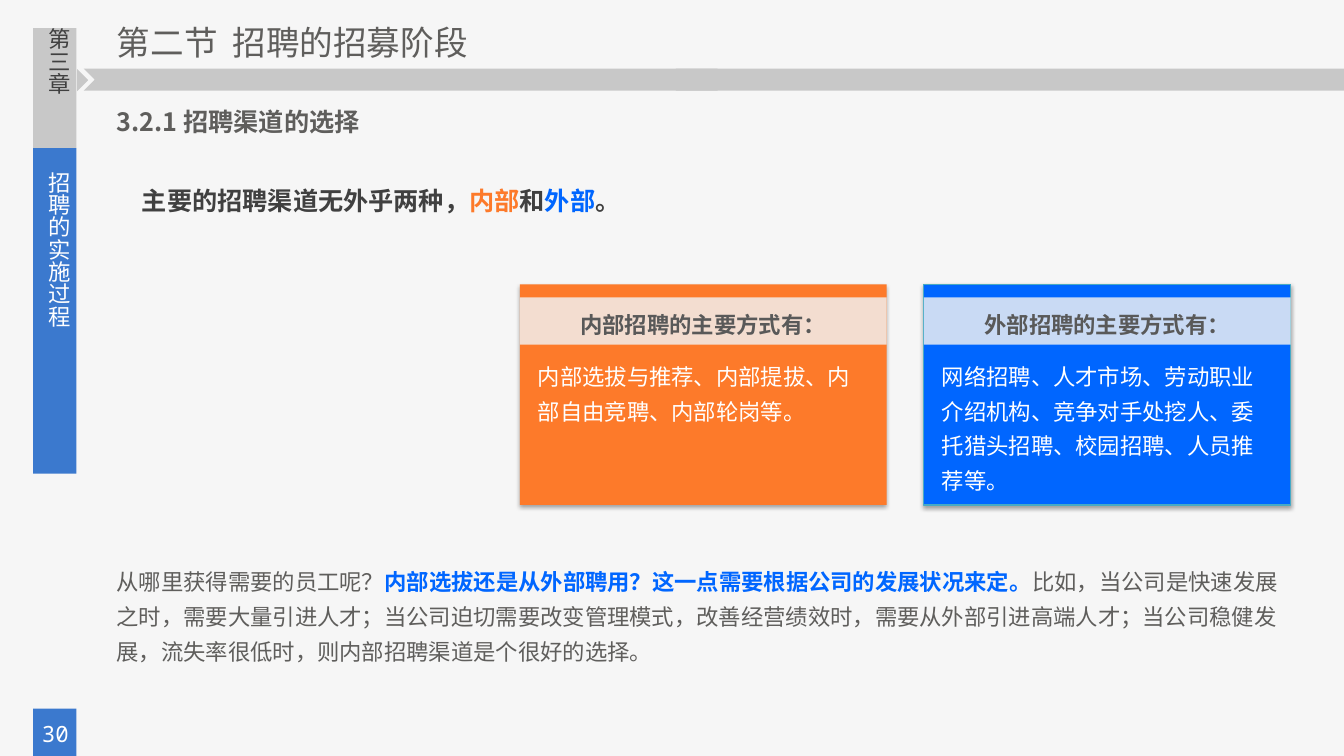
from dataclasses import dataclass

from lxml import etree
from pptx import Presentation
from pptx.dml.color import RGBColor
from pptx.enum.shapes import MSO_SHAPE
from pptx.enum.text import MSO_ANCHOR, MSO_AUTO_SIZE, PP_ALIGN
from pptx.oxml.ns import qn
from pptx.util import Inches, Pt

RECTANGLE, CHEVRON = MSO_SHAPE.RECTANGLE, MSO_SHAPE.CHEVRON
TRIANGLE = MSO_SHAPE.ISOSCELES_TRIANGLE
LEFT, CENTER = PP_ALIGN.LEFT, PP_ALIGN.CENTER
TOP, MIDDLE = MSO_ANCHOR.TOP, MSO_ANCHOR.MIDDLE
NO_AUTOFIT = MSO_AUTO_SIZE.NONE


@dataclass(frozen=True)
class Theme:
    font: str = "Noto Sans CJK SC"
    number_font: str = "Noto Sans Mono"
    page: str = "F6F6F6"
    gray: str = "C8C8C8"
    side_blue: str = "3B79CE"
    orange: str = "FD7A2A"
    blue: str = "0066FF"
    card_edge: str = "46AAC5"
    veil: str = "F2F2F2"
    body: str = "5F5E5C"
    dark: str = "404040"
    card_title: str = "595959"
    white: str = "FFFFFF"
    title_size: int = 24
    heading_size: int = 18
    text_size: int = 16
    spacing: float = 1.3


THEME = Theme()

CHAPTER = "第三章"
CHAPTER_NAME = "招聘的实施过程"
PAGE_NUMBER = "30"
TITLE = "第二节  招聘的招募阶段"
HEADING = "3.2.1 招聘渠道的选择"
# Spans are plain text, or (text, colour) for an emphasised part.
LEAD = ["主要的招聘渠道无外乎两种，", ("内部", THEME.orange), "和",
        ("外部", THEME.blue), "。"]
CARDS = [
    ("内部招聘的主要方式有：",
     "内部选拔与推荐、内部提拔、内部自由竞聘、内部轮岗等。",
     THEME.orange, None),
    ("外部招聘的主要方式有：",
     "网络招聘、人才市场、劳动职业介绍机构、竞争对手处挖人、"
     "委托猎头招聘、校园招聘、人员推荐等。",
     THEME.blue, THEME.card_edge),
]
CLOSING = [
    "从哪里获得需要的员工呢？",
    ("内部选拔还是从外部聘用？这一点需要根据公司的发展状况来定。", THEME.blue),
    "比如，当公司是快速发展之时，需要大量引进人才；当公司迫切需要改变管理模式，"
    "改善经营绩效时，需要从外部引进高端人才；当公司稳健发展，流失率很低时，"
    "则内部招聘渠道是个很好的选择。",
]

# Frame parts: preset, (left, top, width, height), colour, rotation
FRAME = [
    (CHEVRON, (0.83, 0.68, 6.4, 0.22), THEME.gray, 0),
    (RECTANGLE, (0.33, 0.28, 0.43, 1.19), THEME.gray, 0),
    (TRIANGLE, (0.71, 0.74, 0.22, 0.11), THEME.gray, 90),
    (RECTANGLE, (0.33, 1.47, 0.43, 3.23), THEME.side_blue, 0),
    (RECTANGLE, (6.71, 0.68, 6.63, 0.22), THEME.gray, 0),
    (RECTANGLE, (0.33, 7.03, 0.43, 0.47), THEME.side_blue, 0),
]

CARD_LEFT, CARD_TOP, CARD_PITCH = 5.16, 2.82, 4.01
CARD_WIDTH, CARD_HEIGHT = 3.64, 2.19


def add_block(page, preset, at, color, rotation=0, edge=None):
    block = page.shapes.add_shape(preset, *map(Inches, at))
    block.rotation = rotation
    block.shadow.inherit = False
    block.fill.solid()
    block.fill.fore_color.rgb = RGBColor.from_string(color)
    if edge:
        block.line.color.rgb = RGBColor.from_string(edge)
        block.line.width = Pt(0.75)
    else:
        block.line.fill.background()
    return block


def add_alpha(color_element, percent):
    etree.SubElement(color_element, qn("a:alpha"), val=str(percent * 1000))


def add_drop_shadow(block):
    effects = block._element.spPr.find(qn("a:effectLst"))
    shadow = etree.SubElement(
        effects, qn("a:outerShdw"), blurRad=str(Pt(3.1)), dist=str(Pt(1.8)),
        dir=str(90 * 60000), algn="t", rotWithShape="0")
    add_alpha(etree.SubElement(shadow, qn("a:srgbClr"), val="000000"), 35)


def write(box, spans, color, size=THEME.text_size, bold=False, align=LEFT,
          spacing=THEME.spacing, font=THEME.font, anchor=TOP):
    frame = box.text_frame
    frame.word_wrap = True
    frame.auto_size = NO_AUTOFIT
    frame.vertical_anchor = anchor
    para = frame.paragraphs[0]
    para.alignment = align
    para.line_spacing = spacing
    para.font.name = font
    para.font.size = Pt(size)
    para.font.bold = bold
    para.font.color.rgb = RGBColor.from_string(color)
    etree.SubElement(para.font._element, qn("a:ea"), typeface=font)
    for item in spans:
        span = para.add_run()
        if isinstance(item, str):
            span.text = item
        else:
            span.text, accent = item
            span.font.bold = True
            span.font.color.rgb = RGBColor.from_string(accent)


def add_text(page, at, spans, color, **style):
    box = page.shapes.add_textbox(*map(Inches, at))
    write(box, spans, color, **style)
    return box


def add_side_label(page, top, height, text, color):
    """Add a label whose characters run downwards."""
    box = add_text(page, (0.45, top, 0.27, height), [text], color,
                   spacing=1.0, anchor=MIDDLE)
    frame = box.text_frame
    frame.margin_left = frame.margin_right = 0
    frame.margin_top = frame.margin_bottom = 0
    frame._txBody.bodyPr.set("vert", "eaVert")


def add_card(page, left, title, text, color, edge):
    card = add_block(page, RECTANGLE,
                     (left, CARD_TOP, CARD_WIDTH, CARD_HEIGHT), color, edge=edge)
    add_drop_shadow(card)
    veil = add_block(page, RECTANGLE, (left, CARD_TOP + 0.13, CARD_WIDTH, 0.47),
                     THEME.veil)
    add_alpha(veil._element.spPr.find(qn("a:solidFill"))[0], 83)
    add_text(page, (left, CARD_TOP + 0.14, CARD_WIDTH, 0.45), [title],
             THEME.card_title, bold=True, align=CENTER)
    add_text(page, (left + 0.08, CARD_TOP + 0.65, CARD_WIDTH - 0.16, 1.47),
             [text], THEME.white)


def main():
    deck = Presentation()
    deck.slide_width, deck.slide_height = Inches(13.34), Inches(7.5)
    page = deck.slides.add_slide(deck.slide_layouts[5])
    page.background.fill.solid()
    page.background.fill.fore_color.rgb = RGBColor.from_string(THEME.page)

    for part in FRAME:
        add_block(page, *part)
    add_text(page, (0.28, 7.1, 0.54, 0.37), [PAGE_NUMBER], THEME.white,
             align=CENTER, spacing=1.0, font=THEME.number_font)
    add_side_label(page, 0.28, 1.19, CHAPTER, THEME.dark)
    add_side_label(page, 1.7, 2.76, CHAPTER_NAME, THEME.white)

    title = page.shapes.title
    title.left, title.top = Inches(1.06), Inches(0.17)
    title.width, title.height = Inches(5.44), Inches(0.5)
    write(title, [TITLE], THEME.body, size=THEME.title_size, spacing=1.0)

    add_text(page, (1.06, 0.92, 5.77, 0.49), [HEADING], THEME.body,
             size=THEME.heading_size, bold=True)
    add_text(page, (1.31, 1.7, 11.61, 0.49), LEAD, THEME.dark,
             size=THEME.heading_size, bold=True)
    for index, card in enumerate(CARDS):
        add_card(page, CARD_LEFT + index * CARD_PITCH, *card)
    add_text(page, (1.06, 5.51, 11.86, 1.15), CLOSING, THEME.body)

    deck.save("out.pptx")


if __name__ == "__main__":
    main()
